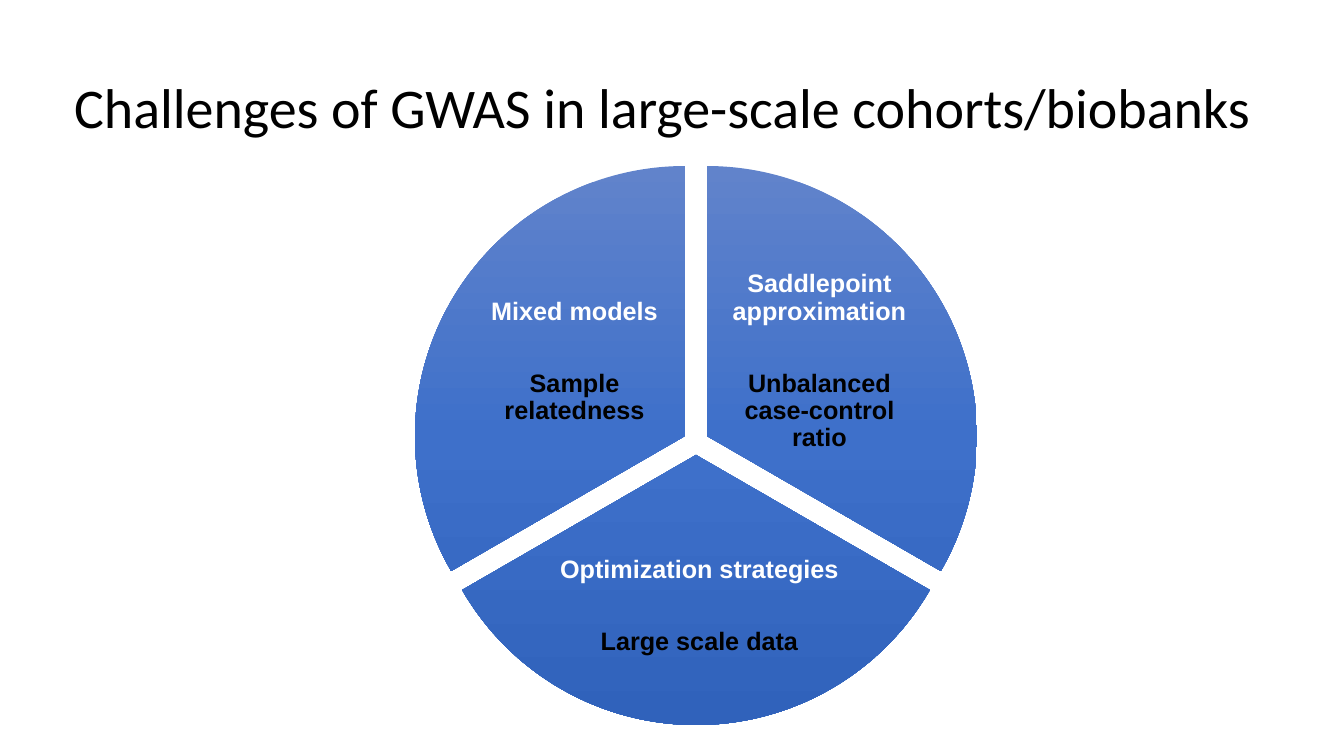
import copy
import dataclasses

import pptx
import pptx.dml.color
import pptx.enum.shapes
import pptx.enum.text
import pptx.util

EMU_PER_PX = 914400 / 100.8


@dataclasses.dataclass(frozen=True)
class Theme:
    title_font: str = "Calibri"
    label_font: str = "Arial"
    title_size: int = 40
    label_size: int = 18
    label_gap: int = 32
    dark: str = "000000"
    light: str = "FFFFFF"
    gradient: tuple = ((0, "6183CB"), (0.5, "3E70CA"), (1, "3062BB"))


THEME = Theme()
PIE_SIZE = 540

# Each sector: pie corner, start and end angle, label box, method, challenge
SECTORS = [
    ((437, 166), (270, 30), (723, 281, 193, 161),
     "Saddlepoint approximation", "Unbalanced case-control ratio"),
    ((426, 185), (30, 150), (555, 536, 289, 141),
     "Optimization strategies", "Large scale data"),
    ((415, 166), (150, 270), (478, 281, 193, 161),
     "Mixed models", "Sample relatedness"),
]


def px(*lengths):
    return [pptx.util.Emu(round(n * EMU_PER_PX)) for n in lengths]


def rgb(color):
    return pptx.dml.color.RGBColor.from_string(color)


def add_run(p, text, font, size, color, bold=False):
    r = p.add_run()
    r.text = text
    r.font.name = font
    r.font.size = pptx.util.Pt(size)
    r.font.color.rgb = rgb(color)
    r.font.bold = bold


def fill_gradient(sp):
    """Fill from top to bottom with the three theme stops."""
    sp.fill.gradient()
    sp.fill.gradient_angle = 270
    stops = sp._element.xpath(".//a:gsLst")[0]
    stops.append(copy.deepcopy(stops[0]))
    for stop, (position, color) in zip(sp.fill.gradient_stops, THEME.gradient):
        stop.position = position
        stop.color.rgb = rgb(color)


def add_sector(s, corner, angles):
    sp = s.shapes.add_shape(pptx.enum.shapes.MSO_SHAPE.PIE,
                            *px(*corner, PIE_SIZE, PIE_SIZE))
    for i, degrees in enumerate(angles):
        sp.adjustments[i] = degrees * 0.6  # 60000ths of a degree / 100000
    fill_gradient(sp)
    sp.line.fill.background()
    sp.shadow.inherit = False


def add_label(s, box, method, challenge):
    tf = s.shapes.add_textbox(*px(*box)).text_frame
    tf.word_wrap = True
    tf.vertical_anchor = pptx.enum.text.MSO_ANCHOR.MIDDLE
    tf.margin_left, tf.margin_top, tf.margin_right, tf.margin_bottom = px(3, 3, 3, 3)
    first, second = tf.paragraphs[0], tf.add_paragraph()
    first.space_after = pptx.util.Pt(THEME.label_gap)
    for p, text, color in ((first, method, THEME.light),
                           (second, challenge, THEME.dark)):
        p.alignment = pptx.enum.text.PP_ALIGN.CENTER
        p.line_spacing = 0.9
        add_run(p, text, THEME.label_font, THEME.label_size, color, bold=True)


def set_title(s, text):
    title = s.shapes.title
    title.left, title.top, title.width, title.height = px(64, 67, 1280, 78)
    tf = title.text_frame
    tf.word_wrap = True
    tf.auto_size = pptx.enum.text.MSO_AUTO_SIZE.NONE
    tf.vertical_anchor = pptx.enum.text.MSO_ANCHOR.TOP
    p = tf.paragraphs[0]
    p.alignment = pptx.enum.text.PP_ALIGN.LEFT
    add_run(p, text, THEME.title_font, THEME.title_size, THEME.dark)


def main():
    prs = pptx.Presentation()
    prs.slide_width, prs.slide_height = px(1344, 756)
    s = prs.slides.add_slide(prs.slide_layouts.get_by_name("Title Only"))
    set_title(s, "Challenges of GWAS in large-scale cohorts/biobanks")
    for corner, angles, box, method, challenge in SECTORS:
        add_sector(s, corner, angles)
        add_label(s, box, method, challenge)
    prs.save("out.pptx")


if __name__ == "__main__":
    main()
